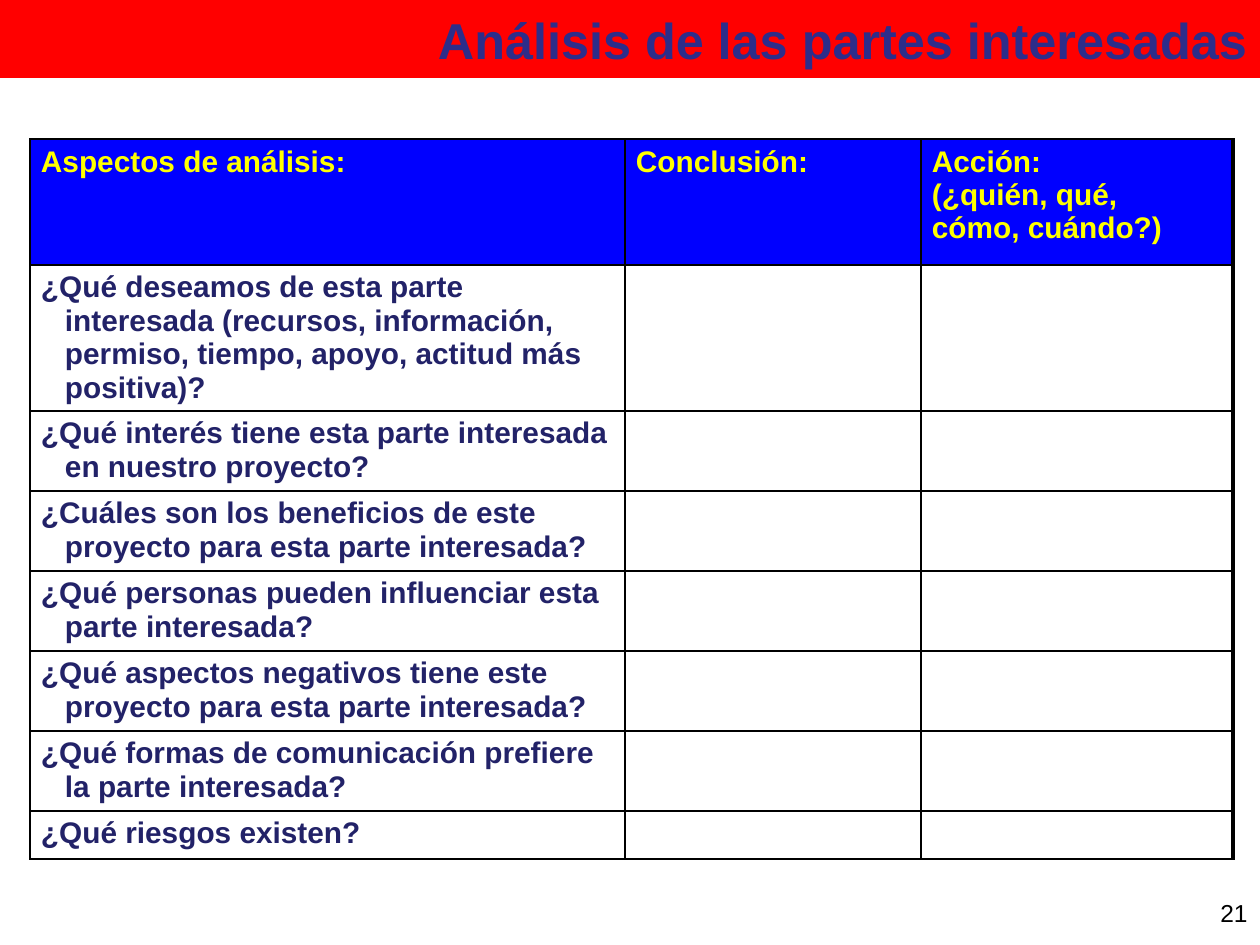
from lxml import etree
from pptx import Presentation
from pptx.dml.color import RGBColor as RGB
from pptx.enum.shapes import MSO_SHAPE as SHAPE
from pptx.enum.text import MSO_ANCHOR as ANCHOR, PP_ALIGN as ALIGN
from pptx.oxml.ns import qn
from pptx.util import Pt

# Content
TITLE = "Análisis de las partes interesadas"
PAGE = "21"
HEADS = ["Aspectos de análisis:", "Conclusión:",
         "Acción:\v(¿quién, qué,\vcómo, cuándo?)"]
ASKS = [
    "¿Qué deseamos de esta parte interesada (recursos, información, "
    "permiso, tiempo, apoyo, actitud más positiva)?",
    "¿Qué interés tiene esta parte interesada en nuestro proyecto?",
    "¿Cuáles son los beneficios de este proyecto para esta parte interesada?",
    "¿Qué personas pueden influenciar esta parte interesada?",
    "¿Qué aspectos negativos tiene este proyecto para esta parte interesada?",
    "¿Qué formas de comunicación prefiere la parte interesada?",
    "¿Qué riesgos existen?",
]
ROWS = [HEADS] + [[ask, "", ""] for ask in ASKS]

# Layout in px, and formats
PX = 914400 // 126
COLS = [595, 296, 312]
HIGH = [126, 146] + [80] * 5 + [46]
HANG = 24
PAD = {"margin_left": 11, "margin_right": 11,
       "margin_top": 6, "margin_bottom": 6}
EDGES = {"lnL": 1, "lnR": 1, "lnT": 1, "lnB": 1}
TITLE_FMT = {"name": "Arial", "size": Pt(28.8), "bold": True}
CELL_FMT = {"name": "Arial", "size": Pt(17), "bold": True}
PAGE_FMT = {"name": "Arial", "size": Pt(14), "bold": False}


def paint(fmt, color):
    fmt.solid()
    fmt.fore_color.rgb = RGB.from_string(color)


def write(frame, text, fmt, color, align=ALIGN.LEFT):
    frame.text = text
    frame.word_wrap = True
    para = frame.paragraphs[0]
    para.alignment = align
    for run in para.runs:
        for key, val in fmt.items():
            setattr(run.font, key, val)
        run.font.color.rgb = RGB.from_string(color)
    return para


def edge(cell, sides):
    props = cell._tc.get_or_add_tcPr()
    for tag, wide in sides.items():
        line = etree.SubElement(props, qn("a:" + tag), w=str(Pt(wide)))
        fill = etree.SubElement(line, qn("a:solidFill"))
        etree.SubElement(fill, qn("a:srgbClr"), val="000000")


def box(*at):
    return [n * PX for n in at]


deck = Presentation()
deck.slide_width, deck.slide_height = box(1260, 945)
slide = deck.slides.add_slide(deck.slide_layouts[6])
shapes = slide.shapes

# Title bar
bar = shapes.add_shape(SHAPE.RECTANGLE, *box(0, 0, 1260, 78))
bar.shadow.inherit = False
paint(bar.fill, "FF0000")
bar.line.fill.background()
bar.text_frame.vertical_anchor = ANCHOR.MIDDLE
write(bar.text_frame, TITLE, TITLE_FMT, "2D2D8A", ALIGN.RIGHT)

# Table
table = shapes.add_table(len(ROWS), len(COLS),
                         *box(30, 139, sum(COLS), sum(HIGH))).table
for col, wide in zip(table.columns, COLS):
    col.width = wide * PX
for r, (row, high) in enumerate(zip(ROWS, HIGH)):
    table.rows[r].height = high * PX
    for c, text in enumerate(row):
        cell = table.cell(r, c)
        for key, val in PAD.items():
            setattr(cell, key, val * PX)
        last = c == len(COLS) - 1
        edge(cell, {**EDGES, "lnR": 2.25} if last else EDGES)
        paint(cell.fill, "FFFFFF" if r else "0000FF")
        para = write(cell.text_frame, text, CELL_FMT,
                     "222268" if r else "FFFF00")
        if not text:  # keeps empty cells as low as the text rows
            etree.SubElement(para._p, qn("a:endParaRPr"), sz="1700")
        elif r:
            props = para._p.get_or_add_pPr()
            props.set("marL", str(HANG * PX))
            props.set("indent", str(-HANG * PX))

# Page number
num = shapes.add_textbox(*box(966, 880, 294, 65)).text_frame
num.vertical_anchor = ANCHOR.MIDDLE
write(num, PAGE, PAGE_FMT, "000000", ALIGN.RIGHT)

deck.save("out.pptx")
